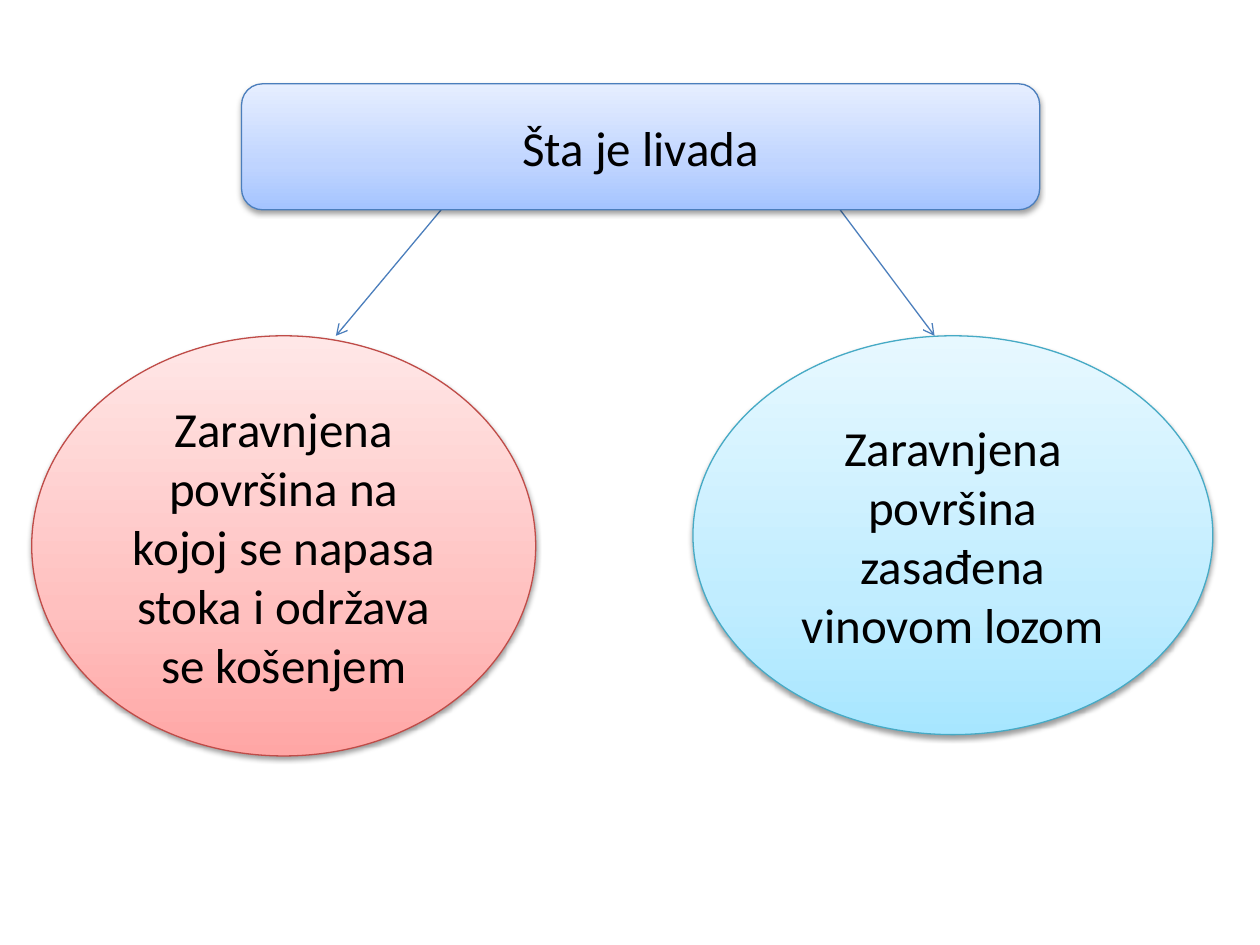
"""Build a slide with a question box and two arrows to possible answers."""
from copy import deepcopy

from lxml import etree
from pptx import Presentation
from pptx import util as u
from pptx.dml.color import RGBColor
from pptx.enum import shapes, text
from pptx.oxml.ns import qn

THEME = {
    "font": "Calibri", "size": 28, "ink": "000000", "line": 0.75,
    "blue": ("4B7EBC", ("A4C4FF", "BFD4FF", "E6EEFF")),
    "red": ("BF4C48", ("FFA6A5", "FFC0BF", "FFE7E7")),
    "aqua": ("46AAC5", ("A7E6FF", "C1EDFF", "E7F8FF")),
    "stops": (0, 0.35, 1),
}
KIND = shapes.MSO_SHAPE
ASK = ("Šta je livada", KIND.ROUNDED_RECTANGLE, "blue", (4.87, 1.69, 16.09, 2.54))
REPLIES = [
    ("Zaravnjena površina na kojoj se napasa stoka i održava se košenjem",
     KIND.OVAL, "red", (0.64, 6.77, 10.16, 8.47)),
    ("Zaravnjena površina zasađena vinovom lozom",
     KIND.OVAL, "aqua", (13.97, 6.77, 10.48, 8.04)),
]
ARROWS = [(0.25, 6.77), (0.75, 18.84)]


def rgb(code):
    return RGBColor.from_string(code)


def write(frame, words, *, size=THEME["size"], color=THEME["ink"],
          align=text.PP_ALIGN.CENTER, anchor=text.MSO_ANCHOR.MIDDLE):
    frame.word_wrap = True
    frame.vertical_anchor = anchor
    para = frame.paragraphs[0]
    para.alignment = align
    run = para.add_run()
    run.text = words
    run.font.name = THEME["font"]
    run.font.size = u.Pt(size)
    run.font.color.rgb = rgb(color)


def shade(shape, tones):
    fill = shape.fill
    fill.gradient()
    fill.gradient_angle = 90
    stops = shape._element.spPr.find(".//" + qn("a:gsLst"))
    stops.append(deepcopy(stops[0]))
    for stop, place, tone in zip(fill.gradient_stops, THEME["stops"], tones):
        stop.position = place
        stop.color.rgb = rgb(tone)


def drop(shape):
    shape.shadow.inherit = False
    effect = shape._element.spPr.find(qn("a:effectLst"))
    cast = etree.SubElement(effect, qn("a:outerShdw"), blurRad="40000",
                            dist="20000", dir="5400000", rotWithShape="0")
    tint = etree.SubElement(cast, qn("a:srgbClr"), val="000000")
    etree.SubElement(tint, qn("a:alpha"), val="38000")


def stroke(item, color):
    item.line.color.rgb = rgb(color)
    item.line.width = u.Pt(THEME["line"])


def node(slide, words, kind, hue, box):
    shape = slide.shapes.add_shape(kind, *map(u.Cm, box))
    edge, tones = THEME[hue]
    shade(shape, tones)
    stroke(shape, edge)
    drop(shape)
    write(shape.text_frame, words)


def arrow(slide, start, end):
    link = slide.shapes.add_connector(
        shapes.MSO_CONNECTOR.STRAIGHT, *map(u.Cm, start + end))
    stroke(link, THEME["blue"][0])
    props = link._element.spPr
    etree.SubElement(props.find(qn("a:ln")), qn("a:tailEnd"), type="arrow")
    etree.SubElement(props, qn("a:effectLst"))


def main():
    deck = Presentation()
    deck.slide_width, deck.slide_height = u.Cm(25.4), u.Cm(19.05)
    slide = deck.slides.add_slide(deck.slide_layouts[6])
    for reply in REPLIES:
        node(slide, *reply)
    left, top, width, height = ASK[3]
    for share, tip in ARROWS:
        arrow(slide, (left + share * width, top + height), (tip, REPLIES[0][3][1]))
    node(slide, *ASK)
    deck.save("out.pptx")


if __name__ == "__main__":
    main()
